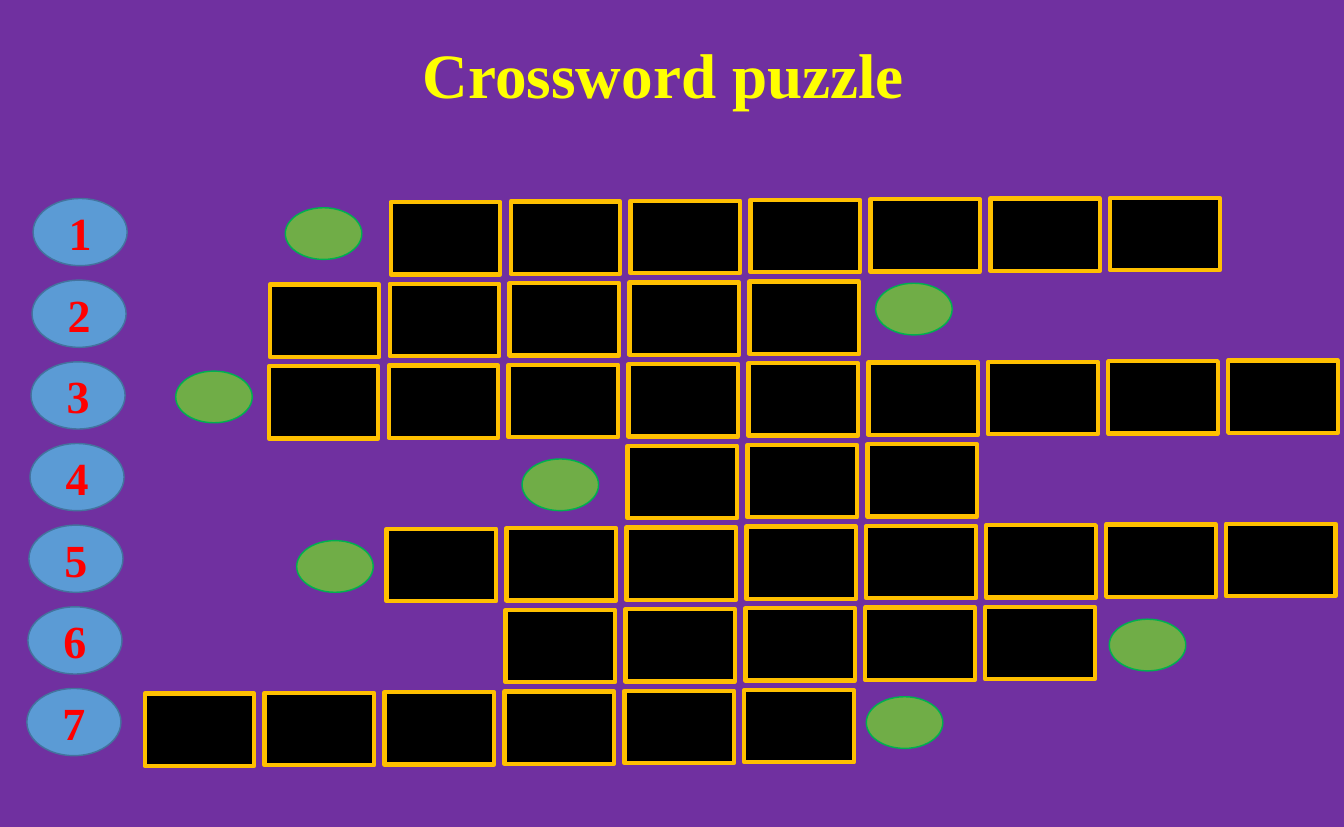
"""Build a crossword puzzle slide with seven numbered answer rows."""
from pptx import Presentation
from pptx.dml.color import RGBColor
from pptx.enum.shapes import MSO_SHAPE
from pptx.enum.text import MSO_ANCHOR, MSO_AUTO_SIZE, PP_ALIGN
from pptx.util import Inches, Pt

PURPLE = RGBColor(0x70, 0x30, 0xA0)
BLACK = RGBColor(0x00, 0x00, 0x00)
GOLD = RGBColor(0xFF, 0xC0, 0x00)
BLUE = RGBColor(0x5B, 0x9B, 0xD5)
DARK_BLUE = RGBColor(0x43, 0x73, 0x9E)
GREEN = RGBColor(0x70, 0xAD, 0x47)
BRIGHT_GREEN = RGBColor(0x00, 0xB0, 0x50)
RED = RGBColor(0xFF, 0x00, 0x00)
YELLOW = RGBColor(0xFF, 0xFF, 0x00)

COLUMN_PITCH = 1.16
ROW_PITCH = 0.79
ROW_SHIFT = -0.01
COLUMN_RISE = 0.07 / 10

# first column, letter count, left and top of the green marker
ANSWERS = [
    (2, 7, 2.76, 2.01),
    (1, 5, 8.47, 2.74),
    (1, 9, 1.7, 3.59),
    (4, 3, 5.05, 4.44),
    (2, 8, 2.87, 5.23),
    (3, 5, 10.73, 5.99),
    (0, 6, 8.38, 6.74),
]


class CrosswordSlide:
    """Hold the font and the slide, and draw each part of the puzzle."""

    def __init__(self, slide, font_name):
        self.slide = slide
        self.font_name = font_name
        slide.background.fill.solid()
        slide.background.fill.fore_color.rgb = PURPLE

    def outlined(self, kind, left, top, width, height, fill, line, weight):
        shape = self.slide.shapes.add_shape(
            kind, Inches(left), Inches(top), Inches(width), Inches(height))
        shape.shadow.inherit = False
        shape.fill.solid()
        shape.fill.fore_color.rgb = fill
        shape.line.color.rgb = line
        shape.line.width = Pt(weight)
        return shape

    def lettering(self, frame, text, size, color, align):
        paragraph = frame.paragraphs[0]
        paragraph.text = text
        paragraph.alignment = align
        paragraph.font.name = self.font_name
        paragraph.font.size = Pt(size)
        paragraph.font.bold = True
        paragraph.font.color.rgb = color

    def letter_cell(self, row, column):
        left = 1.46 + column * COLUMN_PITCH + row * ROW_SHIFT
        top = 1.97 + row * ROW_PITCH - column * COLUMN_RISE
        self.outlined(MSO_SHAPE.RECTANGLE, left, top, 1.06, 0.7, BLACK, GOLD, 3)

    def row_number(self, row):
        badge = self.outlined(
            MSO_SHAPE.OVAL, 0.32 + row * ROW_SHIFT, 1.92 + row * ROW_PITCH,
            0.91, 0.65, BLUE, DARK_BLUE, 1)
        badge.text_frame.vertical_anchor = MSO_ANCHOR.MIDDLE
        self.lettering(badge.text_frame, str(row + 1), 32, RED, PP_ALIGN.CENTER)

    def marker(self, left, top):
        self.outlined(MSO_SHAPE.OVAL, left, top, 0.74, 0.5, GREEN, BRIGHT_GREEN, 1)

    def title(self, text):
        heading = self.slide.shapes.add_textbox(
            Inches(3.99), Inches(0.29), Inches(8.01), Inches(0.84))
        heading.text_frame.word_wrap = True
        heading.text_frame.auto_size = MSO_AUTO_SIZE.SHAPE_TO_FIT_TEXT
        self.lettering(heading.text_frame, text, 44, YELLOW, PP_ALIGN.LEFT)


def main():
    deck = Presentation()
    deck.slide_width = Inches(13)
    deck.slide_height = Inches(8)
    puzzle = CrosswordSlide(
        deck.slides.add_slide(deck.slide_layouts[6]), "Times New Roman")
    for row, (first, letters, marker_left, marker_top) in enumerate(ANSWERS):
        for column in range(first, first + letters):
            puzzle.letter_cell(row, column)
        puzzle.row_number(row)
        puzzle.marker(marker_left, marker_top)
    puzzle.title("Crossword puzzle")
    deck.save("out.pptx")


if __name__ == "__main__":
    main()
